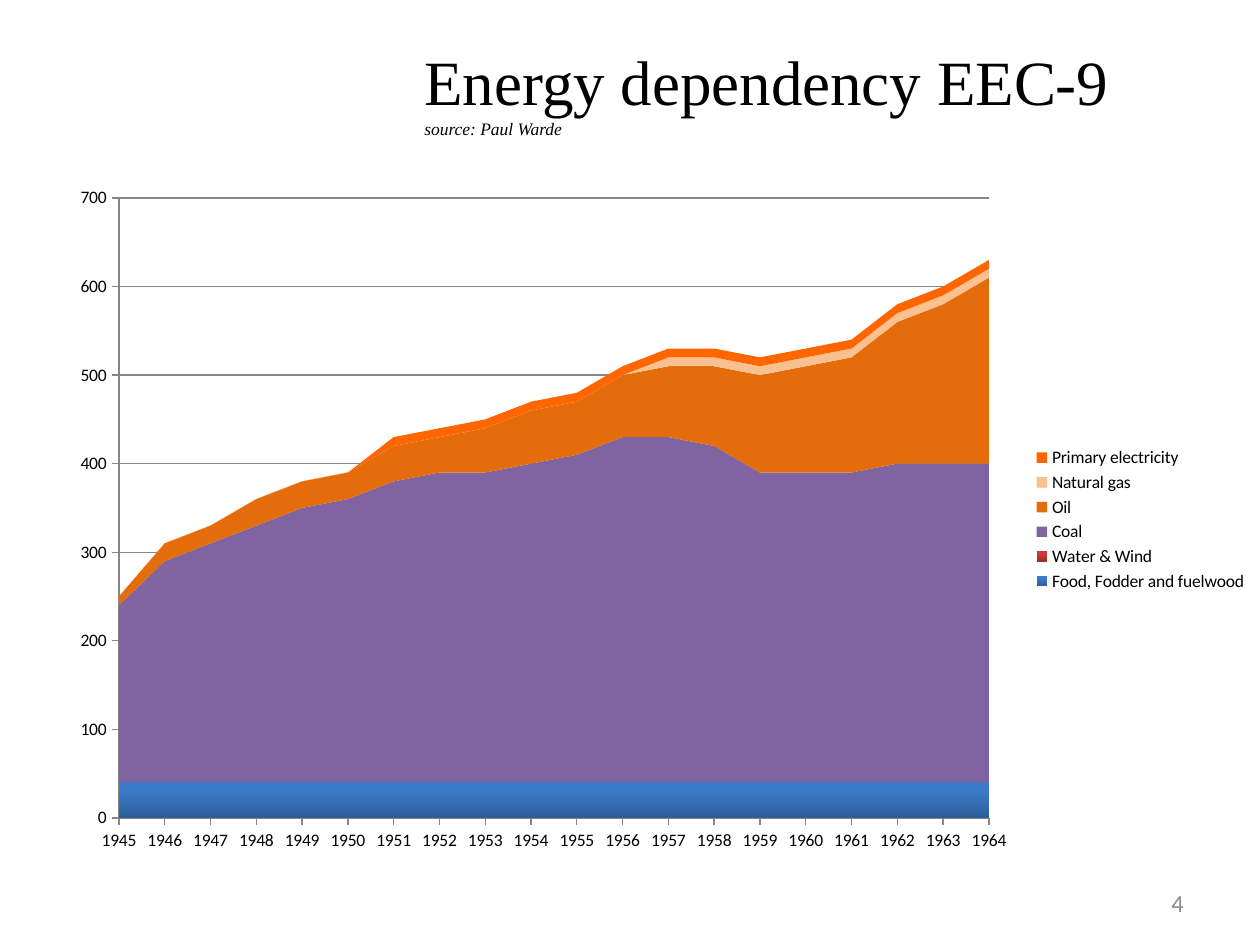
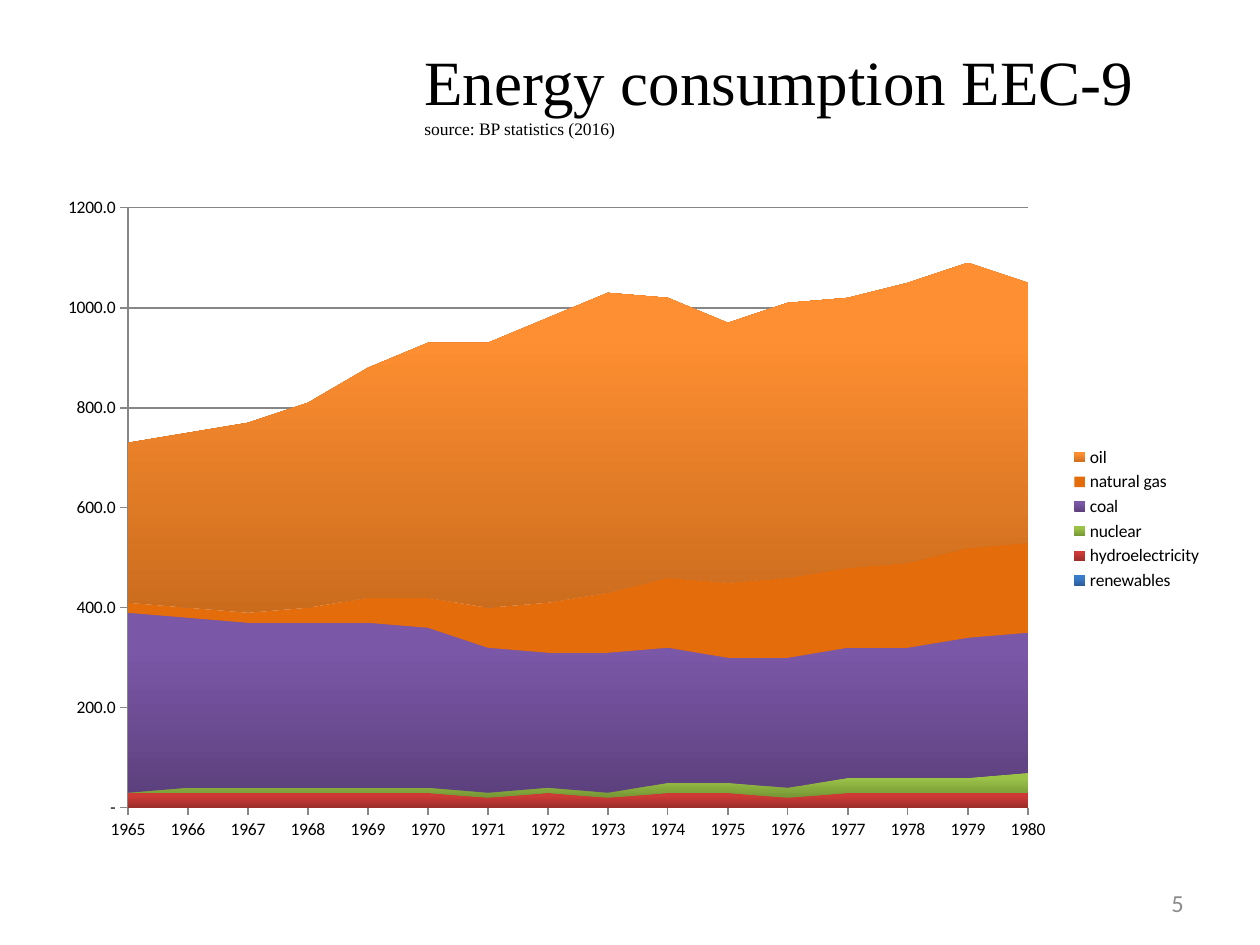
from lxml import etree
from pptx import Presentation
from pptx import util as u
from pptx.chart.data import CategoryChartData
from pptx.dml.color import RGBColor
from pptx.enum import chart as ch, text
from pptx.oxml import parse_xml
from pptx.oxml.ns import qn

PX = 914400 / 126
SERIF, SANS = "Times New Roman", "Calibri"
BLACK, GREY, LINE = "000000", "8C8C8C", "868686"
BLUE, RED = ("2C5D98", "3A7CCB"), ("9B2D2A", "CE3B37")
GREEN, VIOLET = ("769535", "9BC348"), ("5D417E", "7B57A8")
AMBER = ("CB6C1D", "FF8F32")
CNS = "http://schemas.openxmlformats.org/drawingml/2006/chart"

SUPPLY = [
    ("Food, Fodder and fuelwood", BLUE, [40] * 20),
    ("Water & Wind", RED, [0] * 20),
    ("Coal", "8064A2",
     [200, 250, 270, 290, 310, 320, 340, 350, 350, 360,
      370, 390, 390, 380, 350, 350, 350, 360, 360, 360]),
    ("Oil", "E46C0A",
     [10, 20, 20, 30, 30, 30, 40, 40, 50, 60,
      60, 70, 80, 90, 110, 120, 130, 160, 180, 210]),
    ("Natural gas", "FAC090", [0] * 12 + [10] * 8),
    ("Primary electricity", "FF6600", [0] * 6 + [10] * 14),
]

DEMAND = [
    ("renewables", BLUE, [0] * 16),
    ("hydroelectricity", RED,
     [30, 30, 30, 30, 30, 30, 20, 30, 20, 30, 30, 20, 30, 30, 30, 30]),
    ("nuclear", GREEN,
     [0, 10, 10, 10, 10, 10, 10, 10, 10, 20, 20, 20, 30, 30, 30, 40]),
    ("coal", VIOLET,
     [360, 340, 330, 330, 330, 320, 290, 270,
      280, 270, 250, 260, 260, 260, 280, 280]),
    ("natural gas", "E46C0A",
     [20, 20, 20, 30, 50, 60, 80, 100,
      120, 140, 150, 160, 160, 170, 180, 180]),
    ("oil", AMBER,
     [320, 350, 380, 410, 460, 510, 530, 570,
      600, 560, 520, 550, 540, 560, 570, 520]),
]


def emu(*px):
    """Turn px lengths into EMU."""
    return [round(n * PX) for n in px]


def tint(color, code):
    """Set a colour from a hex string."""
    color.rgb = RGBColor.from_string(code)


def style(font, name, size, code):
    """Set the face, size and colour of a font."""
    font.name, font.size = name, u.Pt(size)
    tint(font.color, code)


def frame(slide, box):
    """Add a wrapping text box and return its text frame."""
    body = slide.shapes.add_textbox(*emu(*box)).text_frame
    body.word_wrap = True
    return body


def title(slide, box, head, source, slant):
    """Write the title with its source line below."""
    body = frame(slide, box)
    para = body.paragraphs[0]
    run = para.add_run()
    run.text = head
    style(run.font, SERIF, 36, BLACK)
    para.add_line_break()
    run = para.add_run()
    run.text = source
    style(run.font, SERIF, 10, BLACK)
    run.font.italic = slant


def number(slide, box, page):
    """Write the page number."""
    body = frame(slide, box)
    body.vertical_anchor = text.MSO_ANCHOR.MIDDLE
    para = body.paragraphs[0]
    para.text = str(page)
    style(para.font, SANS, 14, GREY)


def paint(fill, code):
    """Fill with one colour, or with a dark to light pair going up."""
    if isinstance(code, str):
        fill.solid()
        tint(fill.fore_color, code)
        return
    fill.gradient()
    fill.gradient_angle = 90
    for stop, part, spot in zip(fill.gradient_stops, code, (0, 0.8)):
        tint(stop.color, part)
        stop.position = spot


def rule(line):
    """Draw a thin grey axis or grid line."""
    line.width = u.Pt(0.75)
    tint(line.color, LINE)


def place(chart, box, plot):
    """Fix the inner plot area, given in px from the chart's corner."""
    area = chart._chartSpace.find(".//" + qn("c:plotArea"))
    old = area.find(qn("c:layout"))
    if old is not None:
        area.remove(old)
    lay = parse_xml(f'<c:layout xmlns:c="{CNS}"><c:manualLayout/></c:layout>')
    rows = [("layoutTarget", "inner"), ("xMode", "edge"), ("yMode", "edge")]
    wide, high = box[2:]
    rows += [(key, f"{n / full:.4f}") for key, n, full
             in zip("xywh", plot, (wide, high, wide, high))]
    for key, val in rows:
        etree.SubElement(lay[0], qn("c:" + key)).set("val", val)
    area.insert(0, lay)
    for cross in area.iter(qn("c:crossBetween")):
        cross.set("val", "midCat")


def areas(slide, box, plot, start, rows, top, step, form):
    """Add the stacked area chart of energy by source."""
    data = CategoryChartData()
    data.categories = [str(start + i) for i in range(len(rows[0][2]))]
    for name, _, vals in rows:
        data.add_series(name, vals)
    chart = slide.shapes.add_chart(
        ch.XL_CHART_TYPE.AREA_STACKED, *emu(*box), data).chart
    style(chart.font, SANS, 10, BLACK)
    chart.has_title = False
    chart.has_legend = True
    chart.legend.position = ch.XL_LEGEND_POSITION.RIGHT
    chart.legend.include_in_layout = False
    chart.plots[0].vary_by_categories = False
    for item, (_, code, _) in zip(chart.plots[0].series, rows):
        paint(item.format.fill, code)
        item.format.line.fill.background()
    axis = chart.value_axis
    axis.minimum_scale, axis.maximum_scale, axis.major_unit = 0, top, step
    axis.has_major_gridlines = True
    rule(axis.major_gridlines.format.line)
    axis.tick_labels.number_format = form
    axis.tick_labels.number_format_is_linked = False
    chart.category_axis.has_major_gridlines = False
    for axis in (chart.value_axis, chart.category_axis):
        axis.major_tick_mark = ch.XL_TICK_MARK.OUTSIDE
        axis.minor_tick_mark = ch.XL_TICK_MARK.NONE
        rule(axis.format.line)
    place(chart, box, plot)


def page(deck, num, head, source, slant, high, *graph):
    """Build one chart slide."""
    slide = deck.slides.add_slide(deck.slide_layouts[6])
    number(slide, (1159, 878, 79, 50), num)
    title(slide, (412, 36, 784, high), head, source, slant)
    areas(slide, *graph)


def main():
    """Build and save the deck."""
    deck = Presentation()
    deck.slide_width, deck.slide_height = emu(1260, 945)
    page(deck, 4, "Energy dependency EEC-9", "source: Paul Warde", True, 118,
         (57, 175, 1203, 689), (62, 23, 870, 620),
         1945, SUPPLY, 700, 100, "General")
    page(deck, 5, "Energy consumption EEC-9", "source: BP statistics (2016)",
         False, 149, (44, 185, 1171, 668), (84, 23, 900, 600),
         1965, DEMAND, 1200, 200, r"[>0.05]0.0;[=0]\-;\^")
    deck.save("out.pptx")


if __name__ == "__main__":
    main()
